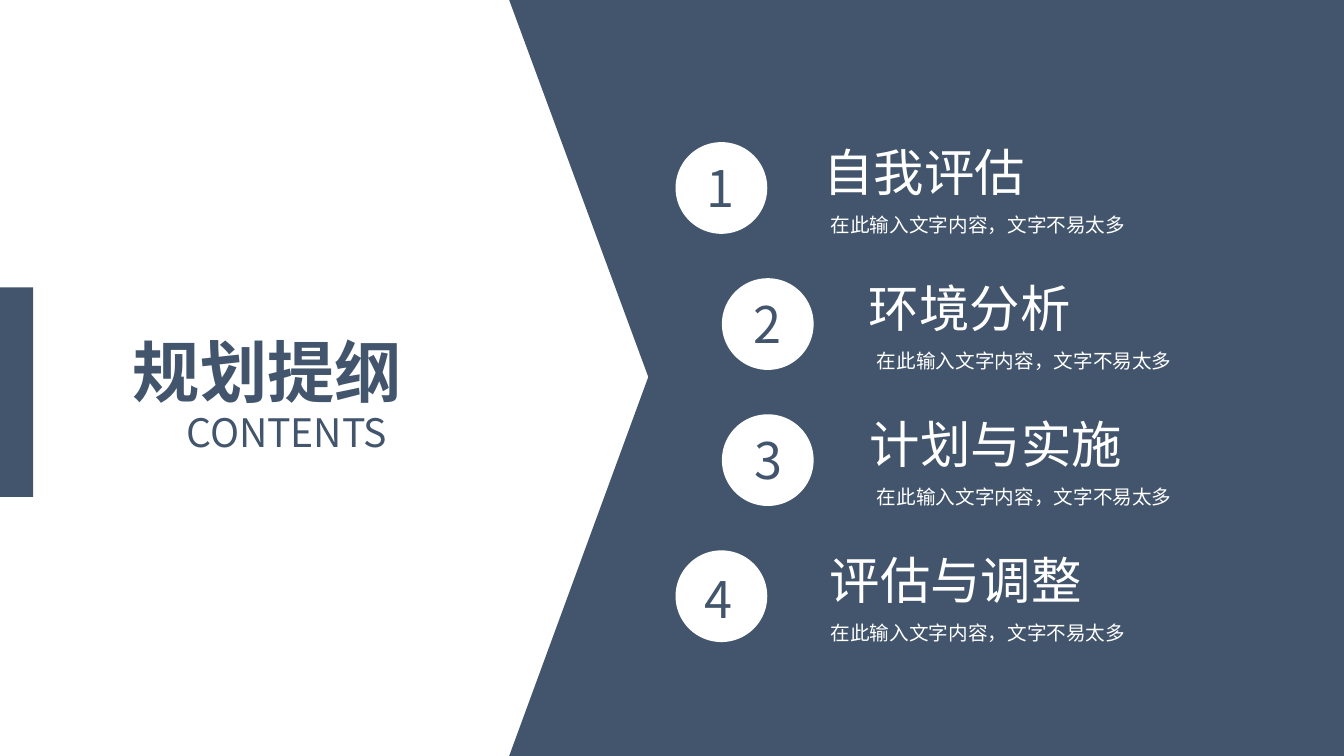
from pptx import Presentation
from pptx.dml.color import RGBColor
from pptx.enum.shapes import MSO_SHAPE
from pptx.enum.text import PP_ALIGN
from pptx.oxml.ns import qn
from pptx.util import Inches, Pt
from lxml.etree import SubElement

FONT = "Noto Sans CJK SC"
COLORS = {"navy": "42556C", "white": "FFFFFF"}
HINT = "在此输入文字内容，文字不易太多"
TOP, STEP, DISC = 1.41, 1.35, 0.91

# Circle left, title left, number left, number drop, title
ITEMS = [
    (6.7, 8.07, 6.91, 0.1, "自我评估"),
    (7.16, 8.52, 7.37, 0.1, "环境分析"),
    (7.16, 8.53, 7.38, 0.1, "计划与实施"),
    (6.7, 8.13, 6.89, 0.13, "评估与调整"),
]


def paint(shape, color):
    shape.shadow.inherit = False
    shape.fill.solid()
    shape.fill.fore_color.rgb = RGBColor.from_string(COLORS[color])
    shape.line.fill.background()


def add_block(slide, kind, box, color):
    shape = slide.shapes.add_shape(kind, *map(Inches, box))
    paint(shape, color)


def add_panel(slide):
    edge = [(13.33, 0), (13.33, 7.5), (5.05, 7.5), (6.43, 3.74)]
    form = slide.shapes.build_freeform(
        Inches(5.05), Inches(0), scale=1.0)
    form.add_line_segments(
        [(Inches(x), Inches(y)) for x, y in edge], close=True)
    paint(form.convert_to_shape(), "navy")


def add_text(slide, box, text, size, color, bold=False, wrap=True,
             align=None, space=None):
    frame = slide.shapes.add_textbox(*map(Inches, box)).text_frame
    frame.word_wrap = wrap
    para = frame.paragraphs[0]
    para.alignment = align
    para.line_spacing = space
    run = para.add_run()
    run.text = text
    font = run.font
    font.name, font.size, font.bold = FONT, Pt(size), bold
    font.color.rgb = RGBColor.from_string(COLORS[color])
    # East Asian glyphs take their own font element
    SubElement(run._r.get_or_add_rPr(), qn("a:ea")).set("typeface", FONT)


def add_item(slide, index, item):
    left, start, num, drop, title = item
    top = TOP + index * STEP
    add_block(slide, MSO_SHAPE.OVAL, (left, top, DISC, DISC), "white")
    add_text(slide, (start, top - 0.06, 0.2 + len(title) * 0.51, 0.71),
             title, 36, "white", wrap=False)
    add_text(slide, (left + 1.44, top + 0.62, 4.34, 0.35),
             HINT, 14, "white", space=1.14)
    add_text(slide, (num, top + drop, 0.51, 0.71),
             str(index + 1), 36, "navy", wrap=False)


def main():
    deck = Presentation()
    deck.slide_width, deck.slide_height = Inches(13.33), Inches(7.5)
    slide = deck.slides.add_slide(deck.slide_layouts[6])

    # Background panel and side tab
    add_panel(slide)
    add_block(slide, MSO_SHAPE.RECTANGLE, (0, 2.85, 0.33, 2.08), "navy")

    # Heading
    add_text(slide, (1.22, 3.23, 3.71, 0.91), "规划提纲", 48, "navy",
             bold=True, align=PP_ALIGN.JUSTIFY)
    add_text(slide, (1.75, 4, 2.66, 0.57), "CONTENTS", 28, "navy",
             align=PP_ALIGN.JUSTIFY)

    # Numbered contents
    for index, item in enumerate(ITEMS):
        add_item(slide, index, item)

    deck.save("out.pptx")


if __name__ == "__main__":
    main()
